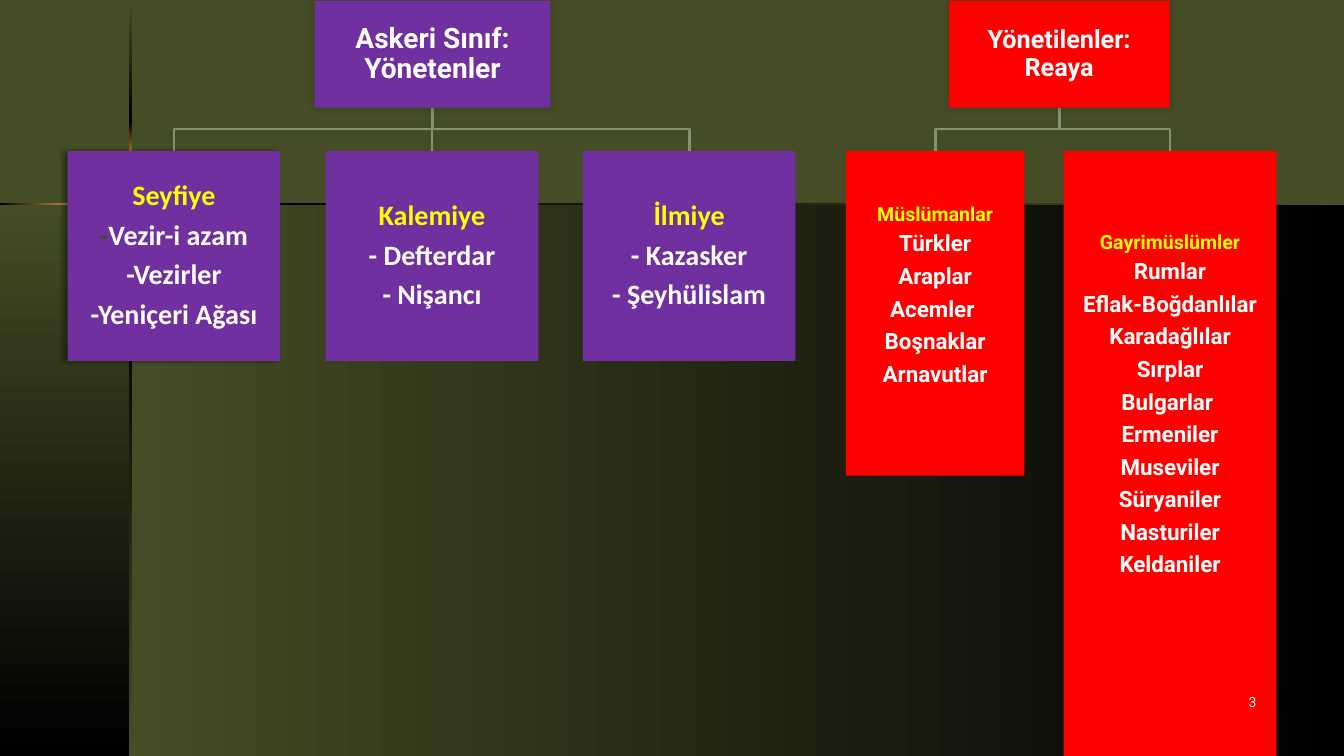
from lxml import etree
from pptx import Presentation
from pptx.dml.color import RGBColor
from pptx.enum.shapes import MSO_SHAPE
from pptx.enum.text import MSO_ANCHOR, PP_ALIGN
from pptx.oxml.ns import qn
from pptx.util import Inches, Pt

RECTANGLE = MSO_SHAPE.RECTANGLE
MIDDLE, TOP = MSO_ANCHOR.MIDDLE, MSO_ANCHOR.TOP
CENTER, RIGHT = PP_ALIGN.CENTER, PP_ALIGN.RIGHT

OLIVE = RGBColor(0x44, 0x4D, 0x26)
BLACK = RGBColor(0x00, 0x00, 0x00)
AMBER = RGBColor(0xF3, 0xA4, 0x47)
SAGE = RGBColor(0x84, 0x91, 0x75)
PURPLE = RGBColor(0x70, 0x30, 0xA0)
RED = RGBColor(0xFF, 0x00, 0x00)
YELLOW = RGBColor(0xFF, 0xFF, 0x00)
WHITE = RGBColor(0xFF, 0xFF, 0xFF)

SLIDE_W, SLIDE_H = 13.33, 7.5
HEAD_TOP, HEAD_H = 0.01, 1.06
BRANCH_Y, GROUP_TOP, GROUP_W = 1.28, 1.5, 2.11
MARGIN = 0.01
SPACE_AFTER = {14: 4.7, 16: 6, 18: 6, 20: 6.6}

# Background bands: left, top, width, height, first colour, last colour, clockwise angle
BANDS = [
    (1.29, 2.02, 12.04, 5.48, OLIVE, BLACK, 0),
    (0, 2.02, 1.29, 5.48, OLIVE, BLACK, 90),
    (1.28, 0.01, 0.03, 1.21, OLIVE, BLACK, 90),
    (1.28, 2.82, 0.03, 4.68, BLACK, OLIVE, 90),
    (2.36, 2.01, 10.97, 0.02, BLACK, OLIVE, 0),
    (1.28, 1.21, 0.03, 0.44, BLACK, AMBER, 90),
    (0, 2.01, 0.81, 0.02, BLACK, AMBER, 0),
]

# Shadows: opacity %, blur pt, distance pt, direction in degrees
HEAD_SHADOW = (20, 6, 0, 315)
SEYFIYE_SHADOW = (40, 4, 3, 180)

# Classes, each with its groups; "low" is room kept free under the members
CLASSES = [
    {"title": "Askeri Sınıf: Yönetenler", "left": 3.12, "width": 2.34, "color": PURPLE,
     "size": 20, "font": "Calibri", "name_size": 20, "member_size": 20,
     "groups": [
         {"name": "Seyfiye", "left": 0.67, "height": 2.08, "shadow": SEYFIYE_SHADOW,
          "members": ["-Vezir-i azam", "-Vezirler", "-Yeniçeri Ağası"],
          "dark_dash": "-Vezir-i azam"},
         {"name": "Kalemiye", "left": 3.23, "height": 2.08,
          "members": ["- Defterdar", "- Nişancı"]},
         {"name": "İlmiye", "left": 5.78, "height": 2.08,
          "members": ["- Kazasker", "- Şeyhülislam"]},
     ]},
    {"title": "Yönetilenler: Reaya", "left": 9.41, "width": 2.19, "color": RED,
     "size": 18, "font": "Roboto", "name_size": 14, "member_size": 16,
     "groups": [
         {"name": "Müslümanlar", "left": 8.39, "width": 1.77, "height": 3.22, "low": 0.36,
          "members": ["Türkler", "Araplar", "Acemler ", "Boşnaklar", "Arnavutlar"]},
         {"name": "Gayrimüslümler", "left": 10.55, "height": 6, "low": 0.97,
          "members": ["Rumlar", "Eflak-Boğdanlılar", "Karadağlılar", "Sırplar",
                      "Bulgarlar ", "Ermeniler", "Museviler", "Süryaniler",
                      "Nasturiler", "Keldaniler"]},
     ]},
]
PAGE_NUMBER = "3"


def add_rectangle(slide, left, top, width, height):
    rectangle = slide.shapes.add_shape(
        RECTANGLE, Inches(left), Inches(top), Inches(width), Inches(height))
    rectangle.shadow.inherit = False
    rectangle.line.fill.background()
    return rectangle


def add_band(slide, left, top, width, height, first, last, angle):
    band = add_rectangle(slide, left, top, width, height)
    band.fill.gradient()
    band.fill.gradient_angle = (360 - angle) % 360
    for stop, color in zip(band.fill.gradient_stops, (first, last)):
        stop.color.rgb = color


def add_shadow(shape, opacity, blur, distance, direction):
    effects = shape.element.spPr.find(qn("a:effectLst"))
    outer = etree.SubElement(
        effects, qn("a:outerShdw"), blurRad=str(Pt(blur)), dist=str(Pt(distance)),
        dir=str(direction * 60000), algn="ctr", rotWithShape="0")
    color = etree.SubElement(outer, qn("a:srgbClr"), val=str(BLACK))
    etree.SubElement(color, qn("a:alpha"), val=str(opacity * 1000))


def style_run(run, font, size, color, bold=True):
    run.font.name, run.font.size, run.font.bold = font, Pt(size), bold
    run.font.color.rgb = color


def add_box(slide, left, top, width, height, fill, font, lines,
            shadow=None, side=MARGIN, low=MARGIN):
    """Each line is a list of (text, size, colour) runs."""
    box = add_rectangle(slide, left, top, width, height)
    box.fill.solid()
    box.fill.fore_color.rgb = fill
    if shadow:
        add_shadow(box, *shadow)
    frame = box.text_frame
    frame.word_wrap, frame.vertical_anchor = True, MIDDLE
    frame.margin_left = frame.margin_right = Inches(side)
    frame.margin_top, frame.margin_bottom = Inches(MARGIN), Inches(low)
    for index, line in enumerate(lines):
        paragraph = frame.add_paragraph() if index else frame.paragraphs[0]
        paragraph.alignment = CENTER
        paragraph.line_spacing = 0.9
        paragraph.space_after = Pt(SPACE_AFTER[line[0][1]])
        for text, size, color in line:
            run = paragraph.add_run()
            run.text = text
            style_run(run, font, size, color)


def add_branch(slide, start_x, end_x):
    points = [(start_x, BRANCH_Y), (end_x, BRANCH_Y), (end_x, GROUP_TOP)]
    builder = slide.shapes.build_freeform(
        Inches(start_x), Inches(HEAD_TOP + HEAD_H), scale=1.0)
    builder.add_line_segments([(Inches(x), Inches(y)) for x, y in points], close=False)
    branch = builder.convert_to_shape()
    branch.shadow.inherit = False
    branch.fill.background()
    branch.line.color.rgb = SAGE
    branch.line.width = Pt(2)


def add_class(slide, ruling):
    # Branches lie behind the boxes
    for group in ruling["groups"]:
        add_branch(slide, ruling["left"] + ruling["width"] / 2,
                   group["left"] + group.get("width", GROUP_W) / 2)
    add_box(slide, ruling["left"], HEAD_TOP, ruling["width"], HEAD_H, ruling["color"],
            "Roboto", [[(ruling["title"], ruling["size"], WHITE)]], HEAD_SHADOW, side=0.1)
    size = ruling["member_size"]
    for group in ruling["groups"]:
        lines = [[(group["name"], ruling["name_size"], YELLOW)]]
        for member in group["members"]:
            if member == group.get("dark_dash"):
                lines.append([(member[0], size, OLIVE), (member[1:], size, WHITE)])
            else:
                lines.append([(member, size, WHITE)])
        add_box(slide, group["left"], GROUP_TOP, group.get("width", GROUP_W),
                group["height"], ruling["color"], ruling["font"], lines,
                group.get("shadow"), low=group.get("low", MARGIN))


def main():
    deck = Presentation()
    deck.slide_width, deck.slide_height = Inches(SLIDE_W), Inches(SLIDE_H)
    slide = deck.slides.add_slide(deck.slide_layouts[6])

    # Background
    slide.background.fill.solid()
    slide.background.fill.fore_color.rgb = OLIVE
    for band in BANDS:
        add_band(slide, *band)

    # Class trees
    for ruling in CLASSES:
        add_class(slide, ruling)

    # Page number
    number = slide.shapes.add_textbox(
        Inches(9.78), Inches(6.83), Inches(2.78), Inches(0.5)).text_frame
    number.word_wrap, number.vertical_anchor = True, TOP
    number.text = PAGE_NUMBER
    number.paragraphs[0].alignment = RIGHT
    style_run(number.paragraphs[0].runs[0], "Roboto", 10, WHITE, bold=False)

    deck.save("out.pptx")


if __name__ == "__main__":
    main()
